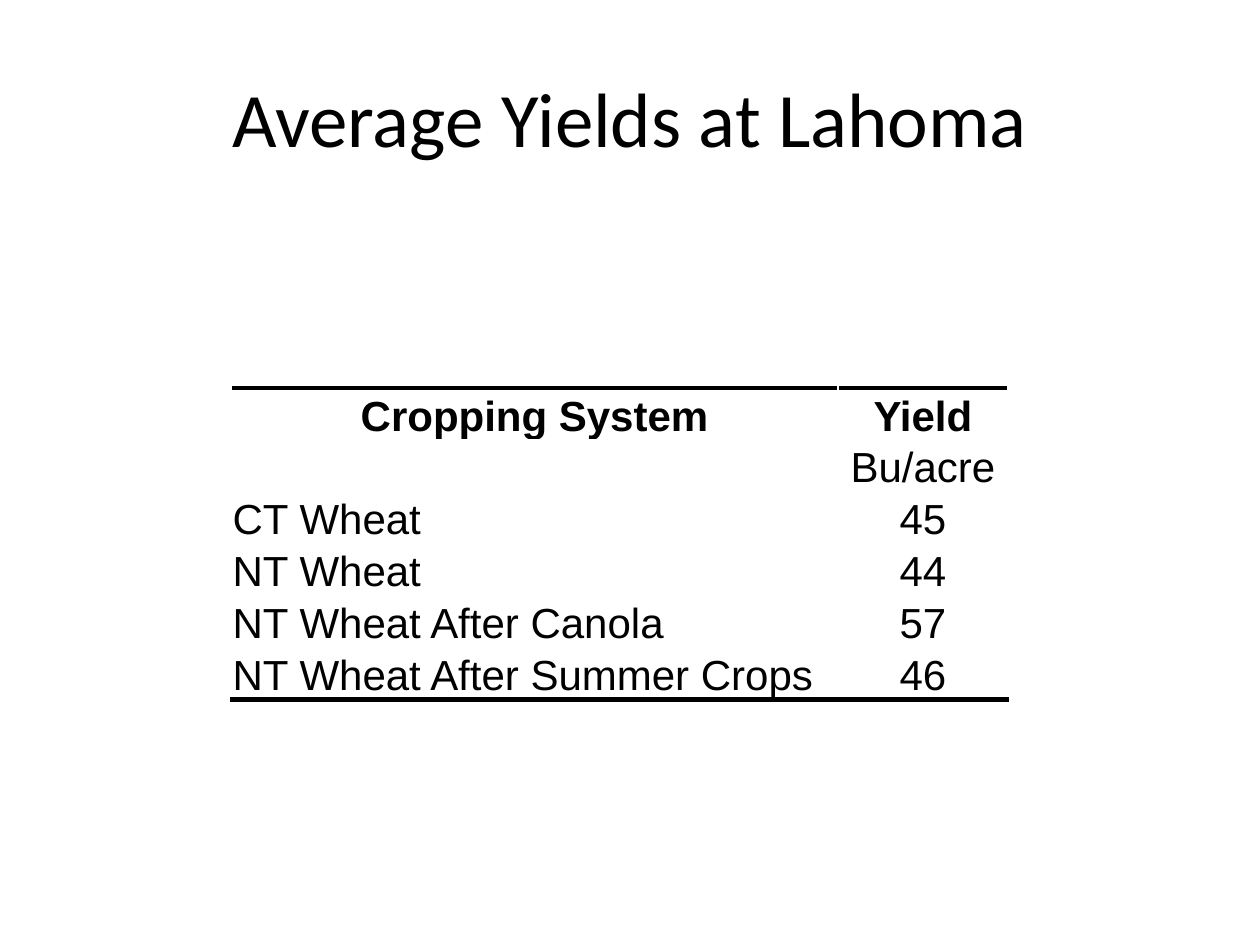
from dataclasses import dataclass

from lxml import etree
from pptx import Presentation
from pptx.dml.color import RGBColor
from pptx.enum.text import MSO_ANCHOR, PP_ALIGN
from pptx.oxml.ns import qn
from pptx.util import Cm, Pt

BLACK = RGBColor(0, 0, 0)
LEFT, CENTER = PP_ALIGN.LEFT, PP_ALIGN.CENTER
MIDDLE, BOTTOM = MSO_ANCHOR.MIDDLE, MSO_ANCHOR.BOTTOM
COLUMN_WIDTHS = (Cm(12.23), Cm(3.43))
ROW_HEIGHT = Cm(1.04)
INSET = Cm(0.03)
RULE_WIDTH = Pt(3)


@dataclass
class YieldRow:
    system: str
    amount: str
    bold: bool = False
    system_align: PP_ALIGN = LEFT
    rule: str = ""


ROWS = [
    YieldRow("Cropping System", "Yield", True, CENTER, "a:lnT"),
    YieldRow("", "Bu/acre"),
    YieldRow("CT Wheat", "45"),
    YieldRow("NT Wheat", "44"),
    YieldRow("NT Wheat After Canola", "57"),
    YieldRow("NT Wheat After Summer Crops", "46", rule="a:lnB"),
]


def style_paragraph(p, text: str, font: str, size: int, align: PP_ALIGN, bold: bool = False) -> None:
    p.text = text
    p.alignment = align
    p.font.name = font
    p.font.size = Pt(size)
    p.font.bold = bold
    p.font.color.rgb = BLACK


def add_rule(cell, tag: str) -> None:
    ln = etree.Element(qn(tag), w=str(RULE_WIDTH))
    fill = etree.SubElement(ln, qn("a:solidFill"))
    etree.SubElement(fill, qn("a:srgbClr"), val=str(BLACK))
    cell._tc.get_or_add_tcPr().insert(0, ln)


def fill_cell(cell, text: str, align: PP_ALIGN, row: YieldRow) -> None:
    cell.fill.background()
    cell.vertical_anchor = BOTTOM
    cell.margin_left = cell.margin_right = cell.margin_top = INSET
    cell.margin_bottom = 0
    style_paragraph(cell.text_frame.paragraphs[0], text, "Arial", 24, align, row.bold)
    if row.rule:
        add_rule(cell, row.rule)


def add_title(s, text: str) -> None:
    sp = s.shapes.add_textbox(Cm(1.27), Cm(0.76), Cm(22.86), Cm(3.18))
    tf = sp.text_frame
    tf.word_wrap = True
    tf.vertical_anchor = MIDDLE
    style_paragraph(tf.paragraphs[0], text, "Calibri", 44, CENTER)


def add_yield_table(s, rows: list[YieldRow]) -> None:
    table = s.shapes.add_table(
        len(rows), len(COLUMN_WIDTHS), Cm(4.66), Cm(7.82),
        sum(COLUMN_WIDTHS), ROW_HEIGHT * len(rows),
    ).table
    table.first_row = table.horz_banding = False
    for column, width in zip(table.columns, COLUMN_WIDTHS):
        column.width = width
    for i, row in enumerate(rows):
        table.rows[i].height = ROW_HEIGHT
        fill_cell(table.cell(i, 0), row.system, row.system_align, row)
        fill_cell(table.cell(i, 1), row.amount, CENTER, row)


def main() -> None:
    prs = Presentation()
    prs.slide_width, prs.slide_height = Cm(25.4), Cm(19.05)
    s = prs.slides.add_slide(prs.slide_layouts[6])
    add_title(s, "Average Yields at Lahoma")
    add_yield_table(s, ROWS)
    prs.save("out.pptx")


if __name__ == "__main__":
    main()
